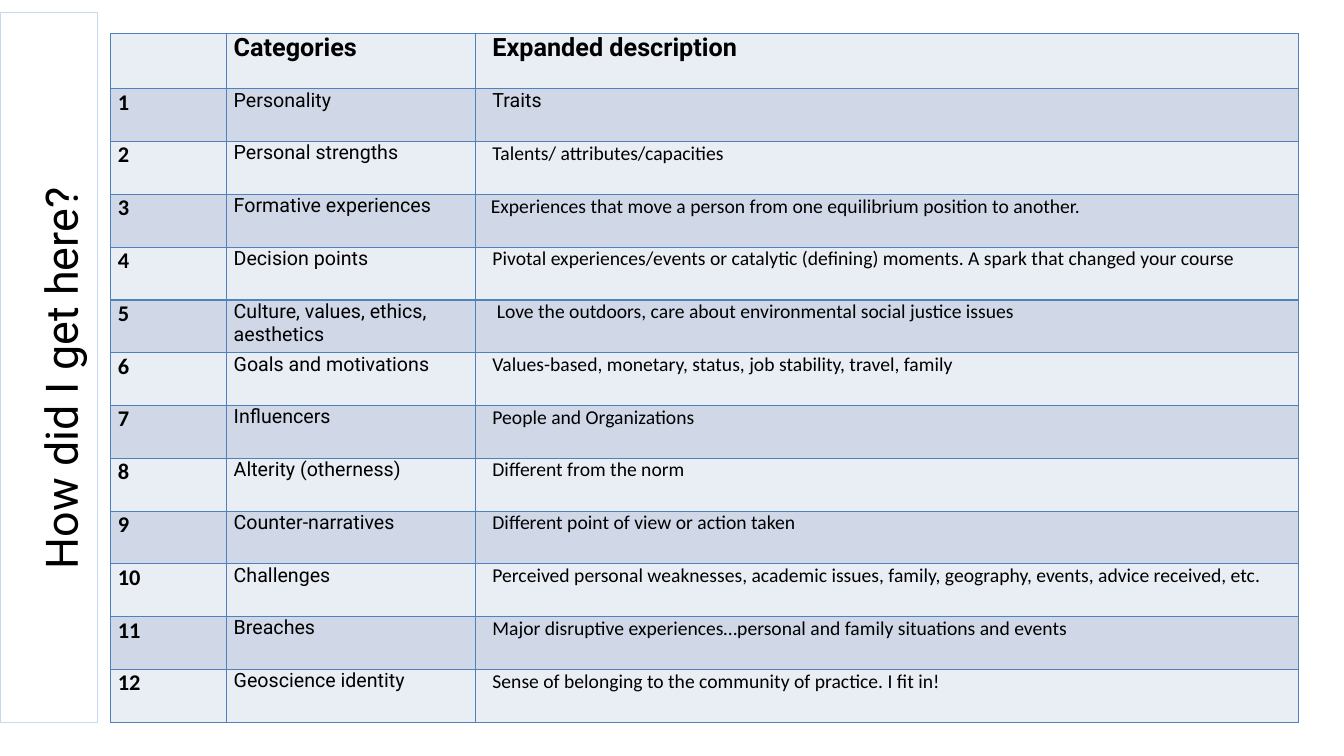
from lxml.etree import SubElement
from pptx import Presentation
from pptx.dml.color import RGBColor
from pptx.enum.text import MSO_ANCHOR, MSO_AUTO_SIZE, PP_ALIGN
from pptx.oxml import parse_xml
from pptx.oxml.ns import nsdecls, qn
from pptx.util import Cm, Pt

COLOURS = {
    "text": "000000",
    "light band": "E9EDF4",
    "dark band": "D0D8E8",
    "grid": "4F81BD",
    "title frame": "C6D9F1",
}
HEADINGS = ("", "Categories", "Expanded description")
CATEGORIES = [
    ("Personality", "Traits"),
    ("Personal strengths", "Talents/ attributes/capacities"),
    ("Formative experiences",
     "Experiences that move a person from one equilibrium position to another."),
    ("Decision points",
     "Pivotal experiences/events or catalytic (defining) moments. "
     "A spark that changed your course"),
    ("Culture, values, ethics, aesthetics",
     "Love the outdoors, care about environmental social justice issues"),
    ("Goals and motivations",
     "Values-based, monetary, status, job stability, travel, family"),
    ("Influencers", "People and Organizations"),
    ("Alterity (otherness)", "Different from the norm"),
    ("Counter-narratives", "Different point of view or action taken"),
    ("Challenges",
     "Perceived personal weaknesses, academic issues, family, geography, "
     "events, advice received, etc."),
    ("Breaches",
     "Major disruptive experiences…personal and family situations and events"),
    ("Geoscience identity",
     "Sense of belonging to the community of practice. I fit in!"),
]
DESCRIPTION_INDENT = 0.25
SPECIAL_INDENTS = {3: 0.21, 5: 0.36}


class SlideBuilder:
    def __init__(self, slide, heading_font="Roboto", body_font="Calibri"):
        self.slide = slide
        self.heading_font = heading_font
        self.body_font = body_font

    def colour(self, name):
        return RGBColor.from_string(COLOURS[name])

    def format_runs(self, paragraph, font_name, size, bold=False):
        for run in paragraph.runs:
            run.font.name = font_name
            run.font.size = Pt(size)
            run.font.bold = bold
            run.font.color.rgb = self.colour("text")

    def side_title(self, wording, left, top, width, height):
        title = self.slide.shapes.title
        title.left, title.top = Cm(left), Cm(top)
        title.width, title.height = Cm(width), Cm(height)
        title.rotation = 270
        title.line.color.rgb = self.colour("title frame")
        title.line.width = Pt(0.75)
        frame = title.text_frame
        frame.text = wording
        frame.word_wrap = True
        frame.auto_size = MSO_AUTO_SIZE.NONE
        frame.vertical_anchor = MSO_ANCHOR.MIDDLE
        frame.margin_top, frame.margin_right = Cm(0.68), Cm(0.8)
        frame.paragraphs[0].alignment = PP_ALIGN.CENTER
        self.format_runs(frame.paragraphs[0], self.heading_font, 32)

    def table(self, left, top, column_widths, row_heights):
        grid = self.slide.shapes.add_table(
            len(row_heights), len(column_widths), Cm(left), Cm(top),
            Cm(sum(column_widths)), Cm(sum(row_heights))).table
        grid.first_row = grid.horz_banding = False
        for column, width in zip(grid.columns, column_widths):
            column.width = Cm(width)
        for row, height in zip(grid.rows, row_heights):
            row.height = Cm(height)
        return grid

    def cell(self, cell, wording, band, font_name, size, bold, indent):
        cell.margin_left = cell.margin_right = Cm(0.18)
        cell.margin_top = cell.margin_bottom = 0
        cell.fill.solid()
        cell.fill.fore_color.rgb = self.colour(band)
        self.borders(cell)
        cell.text_frame.text = wording
        paragraph = cell.text_frame.paragraphs[0]
        if indent:
            properties = paragraph._p.get_or_add_pPr()
            properties.set("marL", str(Cm(indent)))
            properties.set("indent", "0")
            SubElement(properties, qn("a:buNone"))
        self.format_runs(paragraph, font_name, size, bold)

    def borders(self, cell):
        properties = cell._tc.get_or_add_tcPr()
        for position, side in enumerate(("lnL", "lnR", "lnT", "lnB")):
            properties.insert(position, parse_xml(
                f'<a:{side} {nsdecls("a")} w="{Pt(1)}"><a:solidFill>'
                f'<a:srgbClr val="{COLOURS["grid"]}"/></a:solidFill></a:{side}>'))


def main():
    presentation = Presentation()
    presentation.slide_width, presentation.slide_height = Cm(33.87), Cm(19.05)
    builder = SlideBuilder(
        presentation.slides.add_slide(presentation.slide_layouts[5]))
    builder.side_title("How did I get here?", -7.72, 8.03, 17.91, 2.46)

    rows = [HEADINGS] + [
        (str(number), category, description)
        for number, (category, description) in enumerate(CATEGORIES, 1)]
    categories_table = builder.table(
        2.79, 0.84, (2.92, 6.27, 20.75), [1.4] + [1.33] * len(CATEGORIES))

    for row_index, row in enumerate(rows):
        band = "dark band" if row_index % 2 else "light band"
        for column_index, wording in enumerate(row):
            is_heading = row_index == 0
            is_number = column_index == 0
            is_description = column_index == 2
            in_body_font = is_number or (is_description and row_index > 1)
            font_name = builder.body_font if in_body_font else builder.heading_font
            size = 18 if is_heading else 16 if is_number else 14
            indent = (SPECIAL_INDENTS.get(row_index, DESCRIPTION_INDENT)
                      if is_description else 0)
            builder.cell(categories_table.cell(row_index, column_index), wording,
                         band, font_name, size, is_heading or is_number, indent)

    presentation.save("out.pptx")


if __name__ == "__main__":
    main()
